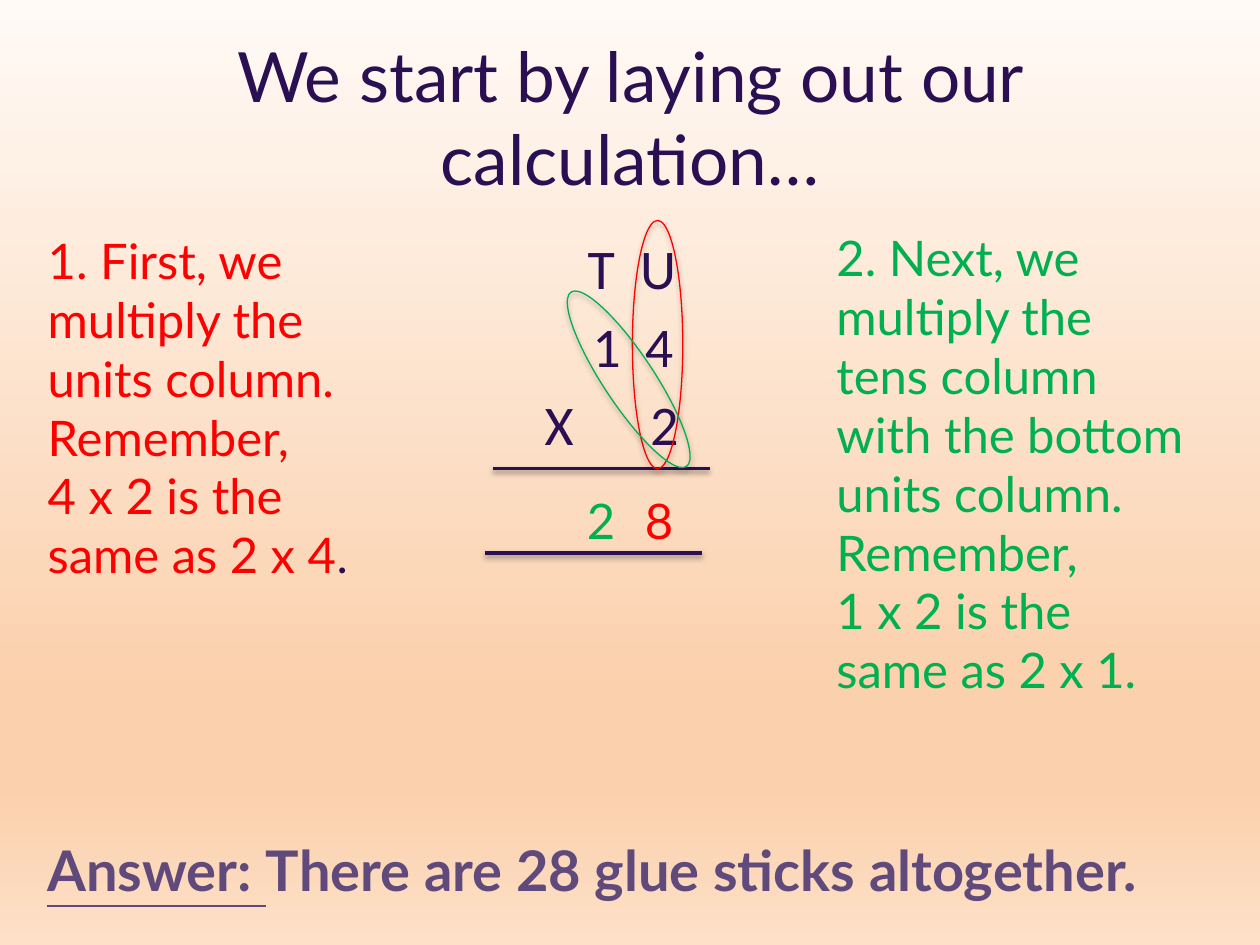
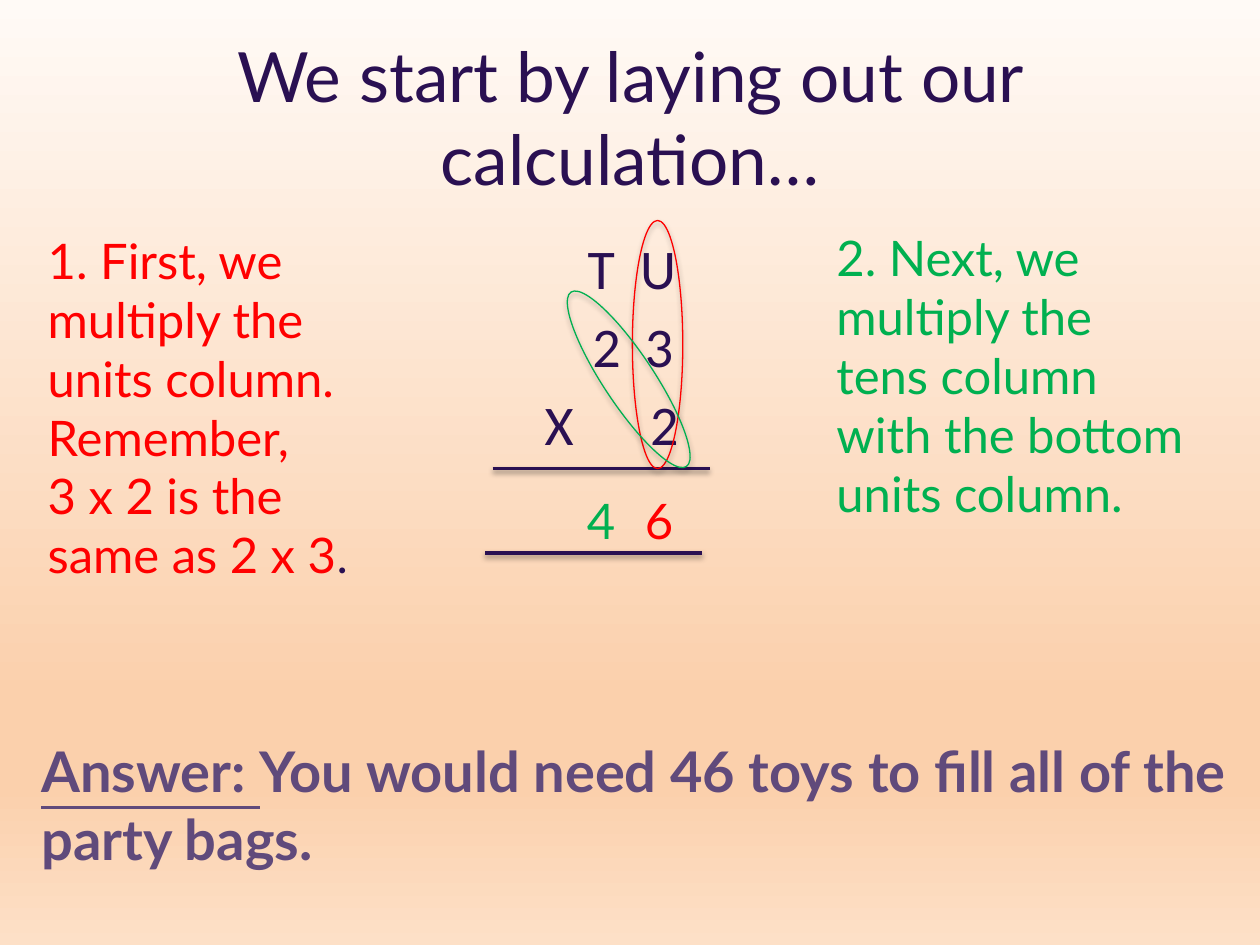
"""Build two slides that explain short multiplication in columns."""
from lxml.etree import SubElement
from pptx import Presentation
from pptx.dml.color import RGBColor
from pptx.enum.shapes import MSO_CONNECTOR, MSO_SHAPE
from pptx.enum.text import MSO_ANCHOR, MSO_AUTO_SIZE, PP_ALIGN
from pptx.oxml.ns import qn
from pptx.util import Pt

COLOURS = {
    "ink": "2A1052",
    "units": "FF0000",
    "tens": "00B050",
    "answer": "604A7B",
    "shadow": "000000",
    "cream": "FFFAF6",
    "peach": "FBD0AC",
    "blush": "FDE0C7",
}
BACKGROUND_STOPS = [(0, "cream"), (74, "peach"), (83, "peach"), (100, "blush")]

FONTS = {
    "title": {"name": "Lato", "size": Pt(39.6)},
    "sum": {"name": "Calibri", "size": Pt(32)},
    "step": {"name": "Lato", "size": Pt(28)},
    "stop": {"name": "Calibri", "size": Pt(28)},
    "label": {"name": "Lato", "size": Pt(32), "bold": True, "underline": True},
    "answer": {"name": "Lato", "size": Pt(32), "bold": True, "underline": False},
}
FITTED = {"auto_size": MSO_AUTO_SIZE.SHAPE_TO_FIT_TEXT}
CENTRED = {"alignment": PP_ALIGN.CENTER}

LINE_SHADOW = {"alpha": 38, "distance": Pt(1.6)}
RING_SHADOW = {"alpha": 35, "distance": Pt(1.8)}

CALCULATIONS = [
    {
        "tens": 1,
        "units": 4,
        "times": 2,
        "remember_tens": True,
        "answer": "There are 28 glue sticks altogether.",
        "answer_box": (20, 474, 700, 46),
    },
    {
        "tens": 2,
        "units": 3,
        "times": 2,
        "remember_tens": False,
        "answer": "You would need 46 toys to fill all of the party bags.",
        "answer_box": (16.5, 417.5, 700, 85),
    },
]


def colour(name):
    """Return a named colour."""
    return RGBColor.from_string(COLOURS[name])


def apply(target, values):
    """Set every attribute in values on the target."""
    for name, value in values.items():
        setattr(target, name, value)


class Builder:
    """Hold the deck and the current slide, and add styled elements."""

    def __init__(self, width, height):
        """Start an empty deck."""
        self.deck = Presentation()
        apply(self.deck, {"slide_width": Pt(width), "slide_height": Pt(height)})
        self.page = None

    def add_page(self):
        """Add a blank slide with the shared gradient."""
        self.page = self.deck.slides.add_slide(self.deck.slide_layouts[6])
        fill = self.page.background.fill
        fill.gradient()
        fill.gradient_angle = 270
        stops = self.page.element.find(".//" + qn("a:gsLst"))
        for stop in list(stops):
            stops.remove(stop)
        for position, name in BACKGROUND_STOPS:
            stop = SubElement(stops, qn("a:gs"), pos=str(position * 1000))
            SubElement(stop, qn("a:srgbClr"), val=COLOURS[name])

    def text(self, place, paragraphs, frame_format=FITTED, para_format=None):
        """Add a text box whose paragraphs are lists of (text, font, colour)."""
        box = self.page.shapes.add_textbox(*map(Pt, place))
        frame = box.text_frame
        apply(frame, {"word_wrap": True, **frame_format})
        for index, spans in enumerate(paragraphs):
            para = frame.add_paragraph() if index else frame.paragraphs[0]
            apply(para, para_format or {})
            for words, font, name in spans:
                span = para.add_run()
                span.text = words
                apply(span.font, FONTS[font])
                span.font.color.rgb = colour(name)
        return box

    def columns(self, place, rows):
        """Add rows of signs, each centred on its own tab stop."""
        lines = [[("".join(f"\t{sign}" for sign, _ in row), "sum", "ink")] for row in rows]
        box = self.text(place, lines, {}, {"space_before": Pt(6.4)})
        for para, row in zip(box.text_frame.paragraphs, rows):
            tabs = SubElement(para._p.get_or_add_pPr(), qn("a:tabLst"))
            for _, centre in row:
                SubElement(tabs, qn("a:tab"), pos=str(Pt(centre)), algn="ctr")

    def shadow(self, effects, alpha, distance):
        """Add a soft shadow below to an effect list."""
        cast = SubElement(effects, qn("a:outerShdw"), blurRad=str(Pt(3.1)),
                          dist=str(distance), dir="5400000", rotWithShape="0")
        tint = SubElement(cast, qn("a:srgbClr"), val=COLOURS["shadow"])
        SubElement(tint, qn("a:alpha"), val=str(alpha * 1000))

    def rule(self, left, top, width):
        """Add a horizontal line."""
        ends = map(Pt, (left, top, left + width, top))
        line = self.page.shapes.add_connector(MSO_CONNECTOR.STRAIGHT, *ends)
        line.line.width = Pt(2)
        line.line.color.rgb = colour("ink")
        effects = SubElement(line.element.spPr, qn("a:effectLst"))
        self.shadow(effects, **LINE_SHADOW)

    def ring(self, place, name, rotation=0):
        """Add an unfilled ellipse."""
        ring = self.page.shapes.add_shape(MSO_SHAPE.OVAL, *map(Pt, place))
        ring.rotation = rotation
        ring.fill.background()
        ring.line.width = Pt(0.75)
        ring.line.color.rgb = colour(name)
        ring.shadow.inherit = False
        self.shadow(ring.element.spPr.find(qn("a:effectLst")), **RING_SHADOW)

    def calculation(self, tens, units, times, remember_tens, answer, answer_box):
        """Add one complete worked calculation."""
        self.add_page()
        self.text((36, 21.6, 648, 90),
                  [[("We start by laying out our calculation…", "title", "ink")]],
                  {"vertical_anchor": MSO_ANCHOR.MIDDLE}, CENTRED)
        self.columns((37.5, 129.6, 648, 356.4), [
            [("T", 299), ("U", 331.5)],
            [(tens, 302), (units, 332)],
            [("X", 275), (times, 335)],
        ])
        self.rule(281.5, 267.8, 124)
        self.ring((361.4, 126, 28.8, 141.8), "units")
        self.ring((344.9, 157, 28.8, 119.5), "tens", 326.5)

        self.text((20.2, 128.2, 204.5, 211), [
            [("1. First, we multiply the units column. Remember,", "step", "units")],
            [(f"{units} x {times} is the same as {times} x {units}", "step", "units"),
             (".", "stop", "ink")],
        ])
        second_step = "2. Next, we multiply the tens column with the bottom units column."
        if remember_tens:
            tens_step = [
                [(f"{second_step} Remember,", "step", "tens")],
                [(f"{tens} x {times} is the same as {times} x {tens}.", "step", "tens")],
            ]
        else:
            tens_step = [[(second_step, "step", "tens")]]
        self.text((470.9, 126.7, 212.4, 312.5 if remember_tens else 211), tens_step)

        self.rule(277.2, 316.1, 124)
        for left, digit, name in [(361.4, units, "units"), (328.3, tens, "tens")]:
            self.text((left, 276.5, 19.4, 41), [[(str(digit * times), "step", name)]])
        self.text(answer_box, [[("Answer: ", "label", "answer"), (answer, "answer", "answer")]])


def main():
    """Build and save the deck."""
    builder = Builder(720, 540)
    for calculation in CALCULATIONS:
        builder.calculation(**calculation)
    builder.deck.save("out.pptx")


if __name__ == "__main__":
    main()
